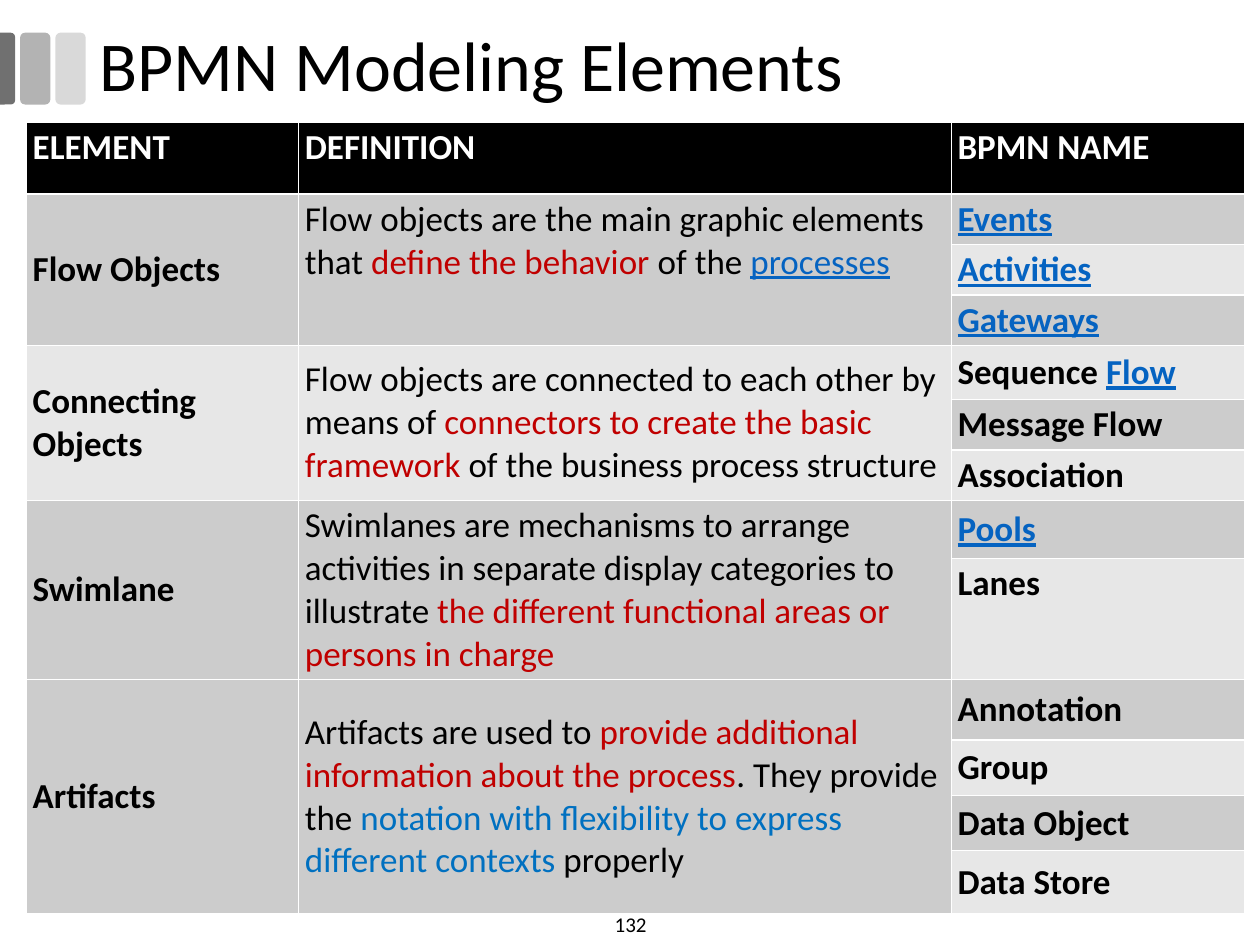
from pptx import Presentation
from pptx.dml.color import RGBColor
from pptx.enum.shapes import MSO_SHAPE
from pptx.enum.text import MSO_ANCHOR, PP_ALIGN
from pptx.util import Inches, Pt

COLS, ROWS = 100, 75
FONT = "Calibri"
BLACK, WHITE, RED, BLUE, LINK = "000000", "FFFFFF", "C00000", "0070C0", "0563C1"
DARK, LIGHT = "CCCCCC", "E7E7E7"

HEADS = ["ELEMENT", "DEFINITION", "BPMN NAME"]
WIDTHS = [21.6, 51.8, 23.3]
HEIGHTS = [5.7, 3.9, 3.9, 3.9, 4.3, 4, 4, 4.6, 8.8, 4.8, 4.4, 4.4, 5]
GROUPS = [
    ("Flow Objects",
     [("Flow objects are the main graphic elements that ", BLACK),
      ("define the behavior ", RED), ("of the ", BLACK), ("processes", LINK)],
     [[("Events", LINK)], [("Activities", LINK)], [("Gateways", LINK)]]),
    ("Connecting Objects",
     [("Flow objects are connected to each other by means of ", BLACK),
      ("connectors to create the basic framework ", RED),
      ("of the business process structure", BLACK)],
     [[("Sequence ", BLACK), ("Flow", LINK)], [("Message Flow", BLACK)],
      [("Association", BLACK)]]),
    ("Swimlane",
     [("Swimlanes are mechanisms to arrange activities in separate display "
       "categories to illustrate ", BLACK),
      ("the different functional areas or persons in charge", RED)],
     [[("Pools", LINK)], [("Lanes", BLACK)]]),
    ("Artifacts",
     [("Artifacts are used to ", BLACK),
      ("provide additional information about the process", RED),
      (". They provide the ", BLACK),
      ("notation with flexibility to express different contexts ", BLUE),
      ("properly", BLACK)],
     [[("Annotation", BLACK)], [("Group", BLACK)], [("Data Object", BLACK)],
      [("Data Store", BLACK)]]),
]

deck = Presentation()
deck.slide_width, deck.slide_height = Inches(10), Inches(7.5)


def across(n):
    """Return the width of n grid columns."""
    return round(deck.slide_width * n / COLS)


def down(n):
    """Return the height of n grid rows."""
    return round(deck.slide_height * n / ROWS)


def place(box):
    """Turn a grid box into slide lengths."""
    left, top, width, height = box
    return across(left), down(top), across(width), down(height)


def paint(part, tint):
    """Give a fill or font part a solid colour from a hex string."""
    if hasattr(part, "solid"):
        part.solid()
        part = part.fore_color
    else:
        part = part.color
    part.rgb = RGBColor.from_string(tint)


def style(para, size, tint=None, bold=False):
    """Set the font shared by all runs of a paragraph."""
    font = para.font
    font.name, font.size, font.bold = FONT, Pt(size), bold
    if tint:
        paint(font, tint)


def write(cell, runs, shade, bold=True, anchor=MSO_ANCHOR.MIDDLE):
    """Fill a table cell with coloured runs."""
    paint(cell.fill, shade)
    cell.margin_left = cell.margin_right = Inches(0.05)
    cell.margin_top = cell.margin_bottom = Inches(0.03)
    cell.vertical_anchor = anchor
    para = cell.text_frame.paragraphs[0]
    style(para, 20, bold=bold)
    for text, tint in runs:
        run = para.add_run()
        run.text = text
        paint(run.font, tint)
        if tint == LINK:
            run.font.underline = True


def add_bars(slide, box):
    """Draw the three grey bars, the first one cut by the slide edge."""
    left, top, width, height = box
    wide, step = 2.4, 2.8
    for index, tint in ((2, "D9D9D9"), (1, "B3B3B3")):
        spot = left + width - wide - (2 - index) * step, top, wide, height
        draw_bar(slide, MSO_SHAPE.ROUNDED_RECTANGLE, spot, tint)
    half = wide / 2
    spot = (left + (half - height) / 2, top + (height - half) / 2, height, half)
    edge = draw_bar(slide, MSO_SHAPE.ROUND_2_SAME_RECTANGLE, spot, "707070")
    edge.rotation = 90
    edge.adjustments[0] = 0.29


def draw_bar(slide, kind, box, tint):
    """Add one plain bar without line or shadow."""
    bar = slide.shapes.add_shape(kind, *place(box))
    bar.shadow.inherit = False
    paint(bar.fill, tint)
    bar.line.fill.background()
    return bar


def add_title(slide, box):
    """Move and format the title placeholder."""
    title = slide.shapes.title
    title.left, title.top, title.width, title.height = place(box)
    frame = title.text_frame
    frame.text = "BPMN Modeling Elements"
    frame.vertical_anchor = MSO_ANCHOR.MIDDLE
    para = frame.paragraphs[0]
    para.alignment, para.line_spacing = PP_ALIGN.LEFT, 0.9
    style(para, 40, BLACK)


def add_grid(slide, box):
    """Build the table of element groups."""
    shape = slide.shapes.add_table(len(HEIGHTS), len(WIDTHS), *place(box))
    table = shape.table
    for column, width in zip(table.columns, WIDTHS):
        column.width = across(width)
    for row, height in zip(table.rows, HEIGHTS):
        row.height = down(height)
    for index, head in enumerate(HEADS):
        write(table.cell(0, index), [(head, WHITE)], BLACK, anchor=MSO_ANCHOR.TOP)
    first = 1
    for label, about, names in GROUPS:
        last = first + len(names) - 1
        for col in (0, 1):
            table.cell(first, col).merge(table.cell(last, col))
        shade = DARK if first % 2 else LIGHT
        write(table.cell(first, 0), [(label, BLACK)], shade)
        high = MSO_ANCHOR.TOP if first == 1 else MSO_ANCHOR.MIDDLE
        write(table.cell(first, 1), about, shade, False, high)
        for index, runs in enumerate(names, first):
            high = MSO_ANCHOR.TOP if runs[0][0] == "Lanes" else MSO_ANCHOR.MIDDLE
            write(table.cell(index, 2), runs, DARK if index % 2 else LIGHT, anchor=high)
        first = last + 1


def add_number(slide, box):
    """Add the page number at the foot."""
    frame = slide.shapes.add_textbox(*place(box)).text_frame
    frame.word_wrap = True
    frame.vertical_anchor = MSO_ANCHOR.MIDDLE
    para = frame.paragraphs[0]
    para.text, para.alignment = "132", PP_ALIGN.CENTER
    style(para, 12, BLACK)


def main():
    """Build the slide and save it."""
    slide = deck.slides.add_slide(deck.slide_layouts[5])
    add_bars(slide, (0, 2.6, 6.8, 5.7))
    add_grid(slide, (2.1, 9.7, sum(WIDTHS), sum(HEIGHTS)))
    add_number(slide, (38.8, 71.7, 22.5, 3.3))
    add_title(slide, (6.9, 1.7, 93, 7.5))
    deck.save("out.pptx")


if __name__ == "__main__":
    main()
